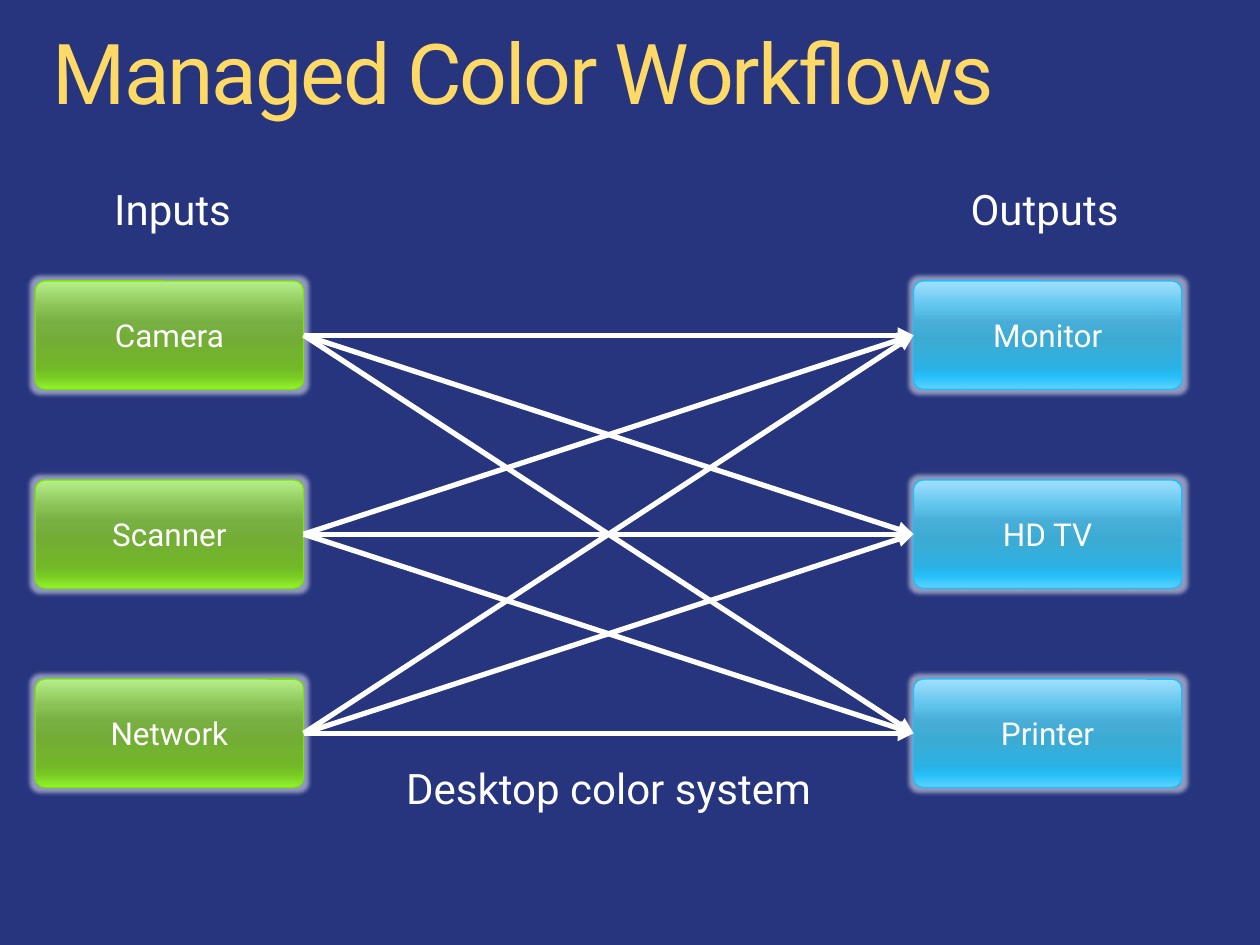
from dataclasses import dataclass
from itertools import product

from lxml.etree import SubElement
from pptx import Presentation
from pptx.dml.color import RGBColor
from pptx.enum.shapes import MSO_CONNECTOR, MSO_SHAPE
from pptx.enum.text import MSO_ANCHOR, MSO_AUTO_SIZE, PP_ALIGN
from pptx.oxml.ns import qn
from pptx.util import Inches, Pt

TITLE = "Managed Color Workflows"
CAPTION = "Desktop color system"
INPUTS = ["Camera", "Scanner", "Network"]
OUTPUTS = ["Monitor", "HD TV", "Printer"]


@dataclass(frozen=True)
class Theme:
    font: str = "Roboto"
    back: str = "26357E"
    white: str = "FFFFFF"
    green_line: str = "77E700"
    blue_line: str = "18C0FF"
    gold: tuple = ((0, "FFF2CC"), (41, "FFD966"), (100, "FFC000"))
    green: tuple = ((0, "B6EF8B"), (25, "8AC155"), (38, "79B044"), (55, "73AD35"),
                    (80, "72B828"), (88, "78CA22"), (100, "94F32F"))
    blue: tuple = ((0, "A0E0FF"), (25, "5DC3EB"), (38, "49AED7"), (55, "3CABD4"),
                   (80, "2CB1E3"), (88, "24BFF8"), (100, "5FD3FF"))
    title_size: int = 48
    heading_size: int = 24
    box_size: int = 18


T = Theme()
WIDTH, HEIGHT = 10, 7.5
LEFT_COL, RIGHT_COL = 0.28, 7.25
TOP_ROW, ROW_STEP = 2.23, 1.58
BOX_W, BOX_H = 2.13, 0.86
HEADING_Y, HEADING_W, HEADING_H = 1.41, 2.08, 0.5
LEFT_SITE, RIGHT_SITE = 1, 3


def rgb(color):
    return RGBColor.from_string(color)


def set_gradient(fill, parent, stops):
    fill.solid()
    solid = parent.find(qn("a:solidFill"))
    grad = parent.makeelement(qn("a:gradFill"), {"rotWithShape": "1"})
    gs_list = SubElement(grad, qn("a:gsLst"))
    for pos, color in stops:
        gs = SubElement(gs_list, qn("a:gs"), pos=str(pos * 1000))
        SubElement(gs, qn("a:srgbClr"), val=color)
    SubElement(grad, qn("a:lin"), ang="5400000", scaled="0")
    parent.replace(solid, grad)


def write(tf, text, size, align=PP_ALIGN.CENTER):
    tf.word_wrap = True
    p = tf.paragraphs[0]
    p.alignment = align
    r = p.add_run()
    r.text = text
    r.font.name = T.font
    r.font.size = Pt(size)
    r.font.color.rgb = rgb(T.white)
    return p, r


def add_title(s):
    sp = s.shapes.title
    sp.left, sp.top, sp.width, sp.height = map(Inches, (0.42, 0.25, 9.16, 0.73))
    tf = sp.text_frame
    tf.margin_left = tf.margin_right = tf.margin_top = tf.margin_bottom = 0
    tf.vertical_anchor = MSO_ANCHOR.TOP
    tf.auto_size = MSO_AUTO_SIZE.SHAPE_TO_FIT_TEXT
    p, r = write(tf, TITLE, T.title_size, PP_ALIGN.LEFT)
    p.line_spacing = 0.9
    props = r.font._element
    props.set("spc", "-120")
    set_gradient(r.font.fill, props, T.gold)


def add_label(s, text, x, y, w):
    sp = s.shapes.add_textbox(*map(Inches, (x, y, w, HEADING_H)))
    sp.text_frame.auto_size = MSO_AUTO_SIZE.SHAPE_TO_FIT_TEXT
    write(sp.text_frame, text, T.heading_size)


def add_box(s, text, x, row, stops, line):
    y = TOP_ROW + row * ROW_STEP
    sp = s.shapes.add_shape(MSO_SHAPE.ROUNDED_RECTANGLE,
                            *map(Inches, (x, y, BOX_W, BOX_H)))
    sp.adjustments[0] = 0.09
    props = sp._element.spPr
    set_gradient(sp.fill, props, stops)
    sp.line.color.rgb = rgb(line)
    sp.line.width = Pt(0.75)
    sp.shadow.inherit = False
    glow = SubElement(props.find(qn("a:effectLst")), qn("a:glow"), rad="63500")
    color = SubElement(glow, qn("a:srgbClr"), val=T.white)
    SubElement(color, qn("a:alpha"), val="50000")
    sp.text_frame.vertical_anchor = MSO_ANCHOR.MIDDLE
    write(sp.text_frame, text, T.box_size)
    return sp


def add_arrow(s, source, target):
    cx = s.shapes.add_connector(MSO_CONNECTOR.STRAIGHT, 0, 0, 0, 0)
    cx.begin_connect(source, RIGHT_SITE)
    cx.end_connect(target, LEFT_SITE)
    cx.line.color.rgb = rgb(T.white)
    cx.line.width = Pt(3)
    props = cx._element.spPr
    SubElement(props.find(qn("a:ln")), qn("a:tailEnd"), type="triangle")
    SubElement(props, qn("a:effectLst"))


def main():
    prs = Presentation()
    prs.slide_width, prs.slide_height = Inches(WIDTH), Inches(HEIGHT)
    s = prs.slides.add_slide(prs.slide_layouts[5])
    s.background.fill.solid()
    s.background.fill.fore_color.rgb = rgb(T.back)

    add_title(s)
    sources = [add_box(s, text, LEFT_COL, row, T.green, T.green_line)
               for row, text in enumerate(INPUTS)]
    targets = [add_box(s, text, RIGHT_COL, row, T.blue, T.blue_line)
               for row, text in enumerate(OUTPUTS)]
    add_label(s, "Inputs", LEFT_COL + 0.05, HEADING_Y, HEADING_W)
    add_label(s, "Outputs", RIGHT_COL, HEADING_Y, HEADING_W)
    add_label(s, CAPTION, 2.83, 6, 4)
    for source, target in product(sources, targets):
        add_arrow(s, source, target)

    prs.save("out.pptx")


if __name__ == "__main__":
    main()
